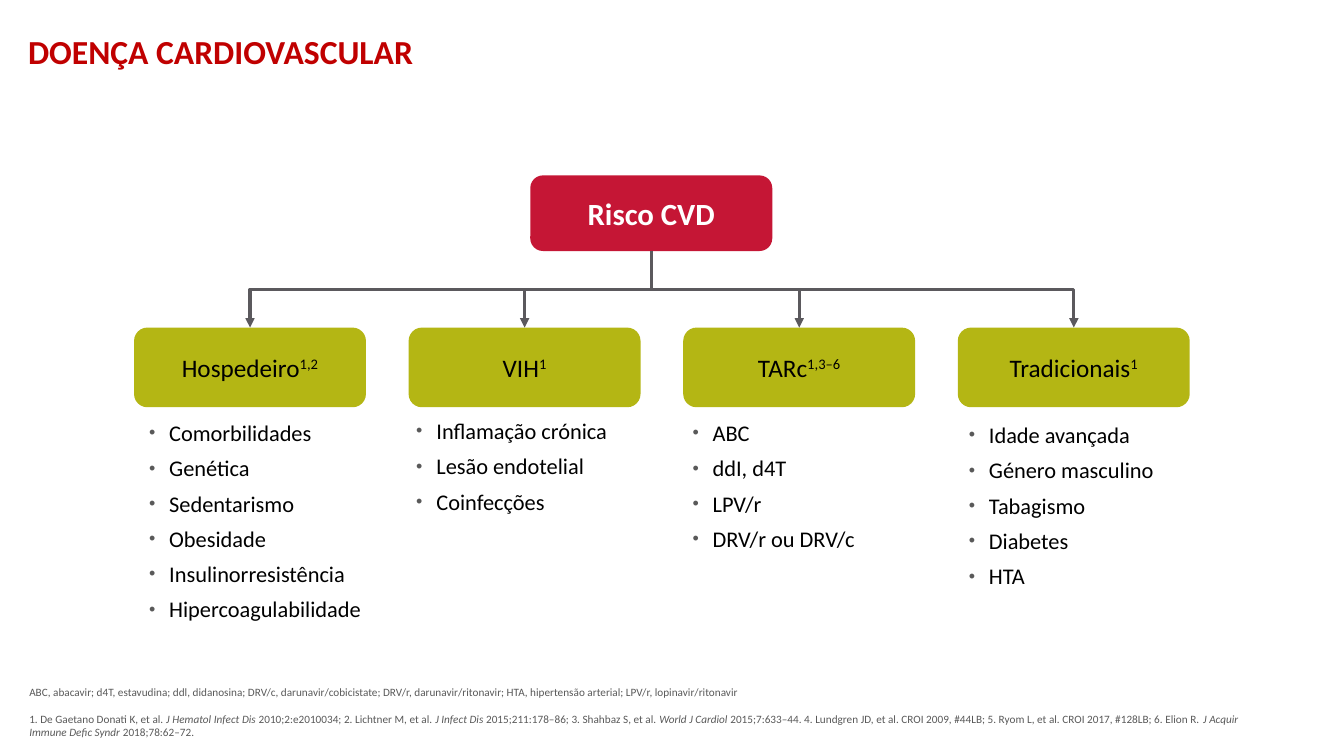
import pptx
import pptx.dml.color
import pptx.enum.shapes
import pptx.enum.text
import pptx.oxml
import pptx.oxml.ns
import pptx.util

Inches = pptx.util.Inches
Pt = pptx.util.Pt
ALIGN = pptx.enum.text.PP_ALIGN
ANCHOR = pptx.enum.text.MSO_ANCHOR
NS = pptx.oxml.ns.nsdecls("a")

COLORS = {
    "title": "C00000",
    "risk": "C51635",
    "factor": "B4B614",
    "arrow": "5B595D",
    "note": "595959",
    "text": "000000",
    "light": "FFFFFF",
}

FACTORS = [
    ("Hospedeiro", "1,2", (1.38, 4.11),
     ["Comorbilidades", "Genética", "Sedentarismo", "Obesidade",
      "Insulinorresistência", "Hipercoagulabilidade"]),
    ("VIH", "1", (4.03, 4.09),
     ["Inflamação crónica", "Lesão endotelial", "Coinfecções"]),
    ("TARc", "1,3–6", (6.77, 4.11),
     ["ABC", "ddI, d4T", "LPV/r", "DRV/r ou DRV/c"]),
    ("Tradicionais", "1", (9.51, 4.13),
     ["Idade avançada", "Género masculino", "Tabagismo", "Diabetes", "HTA"]),
]

ABBREVIATIONS = (
    "ABC, abacavir; d4T, estavudina; ddl, didanosina; DRV/c, darunavir/cobicistate; "
    "DRV/r, darunavir/ritonavir; HTA, hipertensão arterial; LPV/r, lopinavir/ritonavir"
)
REFERENCES = [
    ("1. De Gaetano Donati K, et al. ", ""),
    ("J Hematol Infect Dis ", "italic"),
    ("2010;2:e2010034; 2. Lichtner M, et al. ", ""),
    ("J Infect Dis ", "italic"),
    ("2015;211:178–86; 3. Shahbaz S, et al. ", ""),
    ("World J Cardiol ", "italic"),
    ("2015;7:633–44. 4. Lundgren JD, et al. CROI 2009, #44LB; "
     "5. Ryom L, et al. CROI 2017, #128LB; 6. Elion R. ", ""),
    ("J Acquir Immune Defic Syndr ", "italic"),
    ("2018;78:62–72.", ""),
]


def rgb(name):
    """Return the named colour."""
    return pptx.dml.color.RGBColor.from_string(COLORS[name])


def add_bullet(paragraph):
    """Give a paragraph a hanging round bullet."""
    properties = paragraph._p.get_or_add_pPr()
    properties.set("marL", str(Inches(0.2)))
    properties.set("indent", str(Inches(-0.2)))
    for xml in (
        f'<a:buClr {NS}><a:srgbClr val="{COLORS["note"]}"/></a:buClr>',
        f'<a:buSzPct {NS} val="80000"/>',
        f'<a:buFont {NS} typeface="Arial"/>',
        f'<a:buChar {NS} char="•"/>',
    ):
        properties.append(pptx.oxml.parse_xml(xml))


def write(frame, paragraphs, size, color="text", bold=False, align=ALIGN.LEFT,
          anchor=ANCHOR.TOP, gap=0, first_gap=0, bullets=False):
    """Fill a text frame with paragraphs, each a list of (text, style) runs."""
    frame.word_wrap = True
    frame.vertical_anchor = anchor
    for index, runs in enumerate(paragraphs):
        paragraph = frame.add_paragraph() if index else frame.paragraphs[0]
        paragraph.alignment = align
        paragraph.space_before = Pt(gap if index else first_gap)
        if bullets:
            add_bullet(paragraph)
        for text, style in runs:
            run = paragraph.add_run()
            run.text = text
            run.font.name = "Calibri"
            run.font.size = Pt(size)
            run.font.bold = bold
            run.font.italic = style == "italic"
            run.font.color.rgb = rgb(color)
            if style == "super":
                run.font._element.set("baseline", "30000")


def add_text(slide, box, paragraphs, size, **style):
    """Place a text box and return its frame."""
    frame = slide.shapes.add_textbox(*map(Inches, box)).text_frame
    write(frame, paragraphs, size, **style)
    return frame


def add_node(slide, box, runs, size, fill, **style):
    """Place a rounded box with a centred label."""
    node = slide.shapes.add_shape(
        pptx.enum.shapes.MSO_SHAPE.ROUNDED_RECTANGLE, *map(Inches, box))
    node.shadow.inherit = False
    node.fill.solid()
    node.fill.fore_color.rgb = rgb(fill)
    node.line.fill.background()
    write(node.text_frame, [runs], size, align=ALIGN.CENTER,
          anchor=ANCHOR.MIDDLE, **style)
    return node


def add_branch(slide, risk, factor):
    """Join two nodes by an elbow arrow that leaves downwards."""
    start_x, start_y = risk.left + risk.width // 2, risk.top + risk.height
    end_x, end_y = factor.left + factor.width // 2, factor.top
    middle_x, middle_y = (start_x + end_x) // 2, (start_y + end_y) // 2
    half_run = abs(end_x - start_x) // 2
    goes_left = end_x < start_x
    half_drop = (end_y - start_y) // 2 * (1 if goes_left else -1)
    branch = slide.shapes.add_connector(
        pptx.enum.shapes.MSO_CONNECTOR.ELBOW,
        middle_x - half_drop, middle_y - half_run,
        middle_x + half_drop, middle_y + half_run)
    branch.line.color.rgb = rgb("arrow")
    branch.line.width = Pt(2.25)
    properties = branch._element.spPr
    properties.xfrm.set("rot", str((90 if goes_left else 270) * 60000))
    branch.line._get_or_add_ln().append(
        pptx.oxml.parse_xml(f'<a:tailEnd {NS} type="triangle"/>'))
    properties.append(pptx.oxml.parse_xml(f"<a:effectLst {NS}/>"))


def add_risk_tree(slide, left, top, width):
    """Draw the risk, its four factors and their lists."""
    factor_width = 2.3
    pitch = (width - factor_width) / (len(FACTORS) - 1)
    risk = add_node(slide, (left + 3.93, top, 2.4, 0.75), [("Risco CVD", "")], 22,
                    "risk", color="light", bold=True)
    for column, (name, citation, (list_left, list_top), items) in enumerate(FACTORS):
        factor = add_node(
            slide, (left + column * pitch, top + 1.51, factor_width, 0.79),
            [(name, ""), (citation, "super")], 18, "factor")
        add_branch(slide, risk, factor)
        add_text(slide, (list_left, list_top, 2.71, 0.1 + 0.35 * len(items)),
                 [[(item, "")] for item in items], 16,
                 gap=6, first_gap=6, bullets=True)


def add_footnotes(slide, box):
    """Place the abbreviations and references."""
    notes = add_text(slide, box, [[(ABBREVIATIONS, "")], REFERENCES], 8,
                     color="note", anchor=ANCHOR.BOTTOM, gap=9.75)
    notes.margin_left = notes.margin_right = 0
    notes.margin_top = notes.margin_bottom = 0


def main():
    """Build and save the slide."""
    deck = pptx.Presentation()
    deck.slide_width, deck.slide_height = Inches(13.33), Inches(7.5)
    slide = deck.slides.add_slide(deck.slide_layouts[6])
    add_text(slide, (0.18, 0.26, 8.93, 0.5), [[("DOENÇA CARDIOVASCULAR", "")]], 24,
             color="title", bold=True)
    add_risk_tree(slide, 1.33, 1.74, 10.47)
    add_footnotes(slide, (0.29, 6.83, 12.12, 0.5))
    deck.save("out.pptx")


if __name__ == "__main__":
    main()
